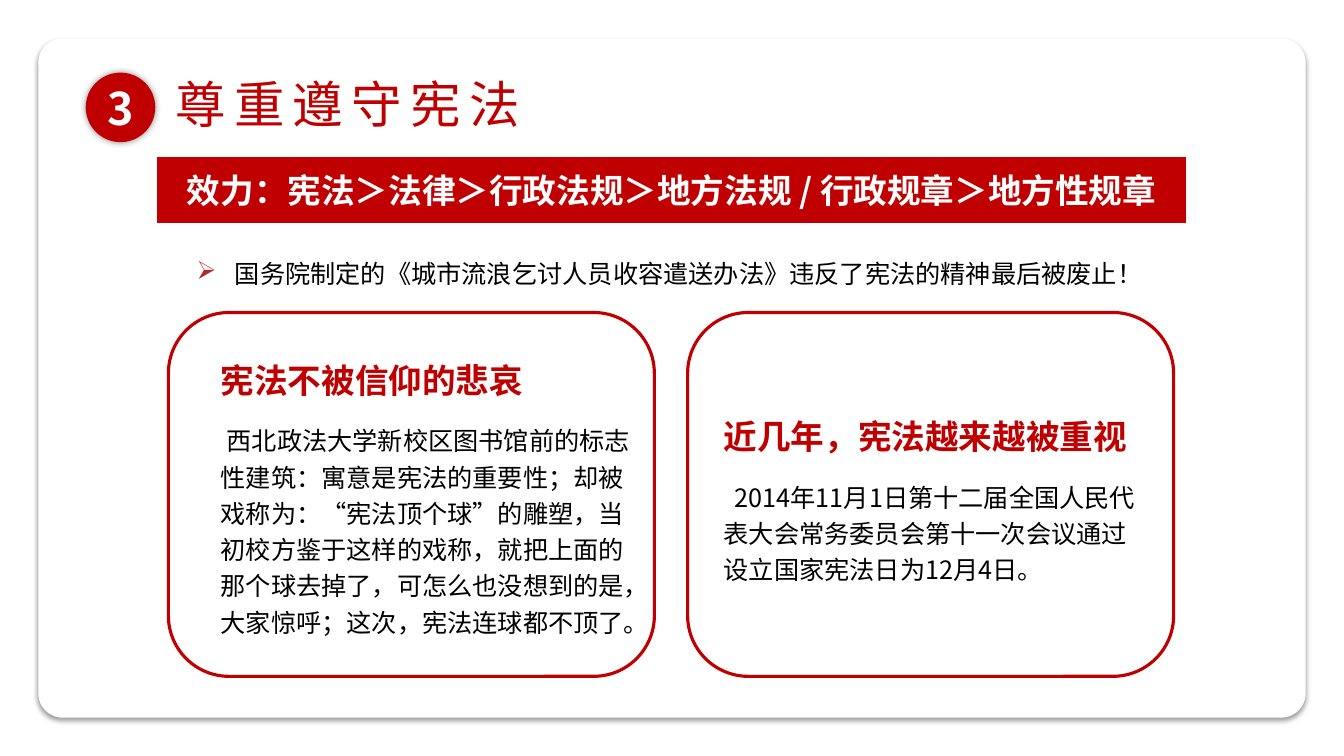
import pptx
import pptx.util
import pptx.dml.color
import pptx.enum.shapes
import pptx.enum.text
import pptx.oxml
import pptx.oxml.ns

Inches, Pt = pptx.util.Inches, pptx.util.Pt
SHAPE = pptx.enum.shapes.MSO_SHAPE
ALIGN = pptx.enum.text.PP_ALIGN
ANCHOR = pptx.enum.text.MSO_ANCHOR
AUTO = pptx.enum.text.MSO_AUTO_SIZE
NS = pptx.oxml.ns.nsdecls("a")

COLORS = {"red": "C00000", "bullet": "B3272D", "white": "FFFFFF", "black": "000000"}
BODY, HEADING = "Noto Sans CJK SC", "Noto Sans CJK JP"

NUMBER = "3"
TITLE = "尊重遵守宪法"
BANNER = "效力：宪法＞法律＞行政法规＞地方法规 / 行政规章＞地方性规章"
POINT = "国务院制定的《城市流浪乞讨人员收容遣送办法》违反了宪法的精神最后被废止！"
PANELS = [
    {"frame_left": 1.67, "text_box": (2.09, 3.44, 4.3, 2.9), "indent": 0.06,
     "heading": "宪法不被信仰的悲哀",
     "body": "西北政法大学新校区图书馆前的标志性建筑：寓意是宪法的重要性；却被戏称为："
             "“宪法顶个球”的雕塑，当初校方鉴于这样的戏称，就把上面的那个球去掉了，"
             "可怎么也没想到的是，大家惊呼；这次，宪法连球都不顶了。"},
    {"frame_left": 6.82, "text_box": (7.08, 4, 4.3, 1.81), "indent": 0.11,
     "heading": "近几年，宪法越来越被重视",
     "body": "2014年11月1日第十二届全国人民代表大会常务委员会第十一次会议"
             "通过设立国家宪法日为12月4日。"},
]


def rgb(name):
    return pptx.dml.color.RGBColor.from_string(COLORS[name])


def add_shape(kind, box, fill=None, line=None, width=0.75):
    s = slide.shapes.add_shape(kind, *map(Inches, box))
    s.shadow.inherit = False
    if fill:
        s.fill.solid()
        s.fill.fore_color.rgb = rgb(fill)
    else:
        s.fill.background()
    if line:
        s.line.color.rgb = rgb(line)
        s.line.width = Pt(width)
    else:
        s.line.fill.background()
    return s


def add_shadow(s, blur, dist, angle):
    effects = s._element.spPr.find(pptx.oxml.ns.qn("a:effectLst"))
    effects.append(pptx.oxml.parse_xml(
        f'<a:outerShdw {NS} blurRad="{Pt(blur)}" dist="{Pt(dist)}" dir="{angle * 60000}" '
        f'algn="ctr" rotWithShape="0"><a:srgbClr val="{COLORS["black"]}">'
        f'<a:alpha val="40000"/></a:srgbClr></a:outerShdw>'))


def add_text_frame(box, insets=(0.1, 0.05)):
    tf = slide.shapes.add_textbox(*map(Inches, box)).text_frame
    tf.word_wrap = True
    tf.auto_size = AUTO.SHAPE_TO_FIT_TEXT
    tf.margin_left = tf.margin_right = Inches(insets[0])
    tf.margin_top = tf.margin_bottom = Inches(insets[1])
    return tf


def add_run(p, text, size, color, bold=False, font=BODY):
    r = p.add_run()
    r.text = text
    r.font.size = Pt(size)
    r.font.bold = bold
    r.font.color.rgb = rgb(color)
    r.font.name = font
    r._r.get_or_add_rPr().append(pptx.oxml.parse_xml(f'<a:ea {NS} typeface="{font}"/>'))
    return r


def add_label(s, text, size):
    tf = s.text_frame
    tf.word_wrap = True
    tf.vertical_anchor = ANCHOR.MIDDLE
    p = tf.paragraphs[0]
    p.alignment = ALIGN.CENTER
    add_run(p, text, size, "white", bold=True)
    return tf


prs = pptx.Presentation()
prs.slide_width, prs.slide_height = Inches(13.33), Inches(7.5)
slide = prs.slides.add_slide(prs.slide_layouts[6])

card = add_shape(SHAPE.ROUNDED_RECTANGLE, (0.38, 0.38, 12.57, 6.74), "white")
card.adjustments[0] = 0.036
add_shadow(card, 4, 3, 90)

badge = add_shape(SHAPE.OVAL, (0.85, 0.72, 0.69, 0.69), "red")
add_shadow(badge, 5, 0, 0)
tf = add_label(badge, NUMBER, 32)
tf.margin_left = tf.margin_right = 0

tf = add_text_frame((1.62, 0.67, 4.2, 0.73), (0.12, 0.06))
r = add_run(tf.paragraphs[0], TITLE, 36, "red", font=HEADING)
r._r.get_or_add_rPr().set("spc", "600")

add_label(add_shape(SHAPE.RECTANGLE, (1.56, 1.56, 10.2, 0.65), "red", "red"), BANNER, 24)

p = add_text_frame((1.95, 2.41, 9.42, 0.41), (0, 0)).paragraphs[0]
pPr = p._p.get_or_add_pPr()
pPr.set("marL", str(Inches(0.38)))
pPr.set("indent", str(-Inches(0.38)))
for bullet in (f'<a:buClr {NS}><a:srgbClr val="{COLORS["bullet"]}"/></a:buClr>',
               f'<a:buChar {NS} char="➢"/>'):
    pPr.append(pptx.oxml.parse_xml(bullet))
p.alignment = ALIGN.JUSTIFY
p.line_spacing = 1.5
add_run(p, POINT, 18, "black")

for panel in PANELS:
    tf = add_text_frame(panel["text_box"])
    p = tf.paragraphs[0]
    p.line_spacing = 1.2
    add_run(p, panel["heading"], 24, "red", bold=True)
    p = tf.add_paragraph()
    p.line_spacing = 1.2
    p.space_before = Pt(14)
    p._p.get_or_add_pPr().set("indent", str(Inches(panel["indent"])))
    add_run(p, panel["body"], 18, "black")
    add_shape(SHAPE.ROUNDED_RECTANGLE, (panel["frame_left"], 3.1, 4.82, 3.61),
              line="red", width=2.25)

prs.save("out.pptx")
